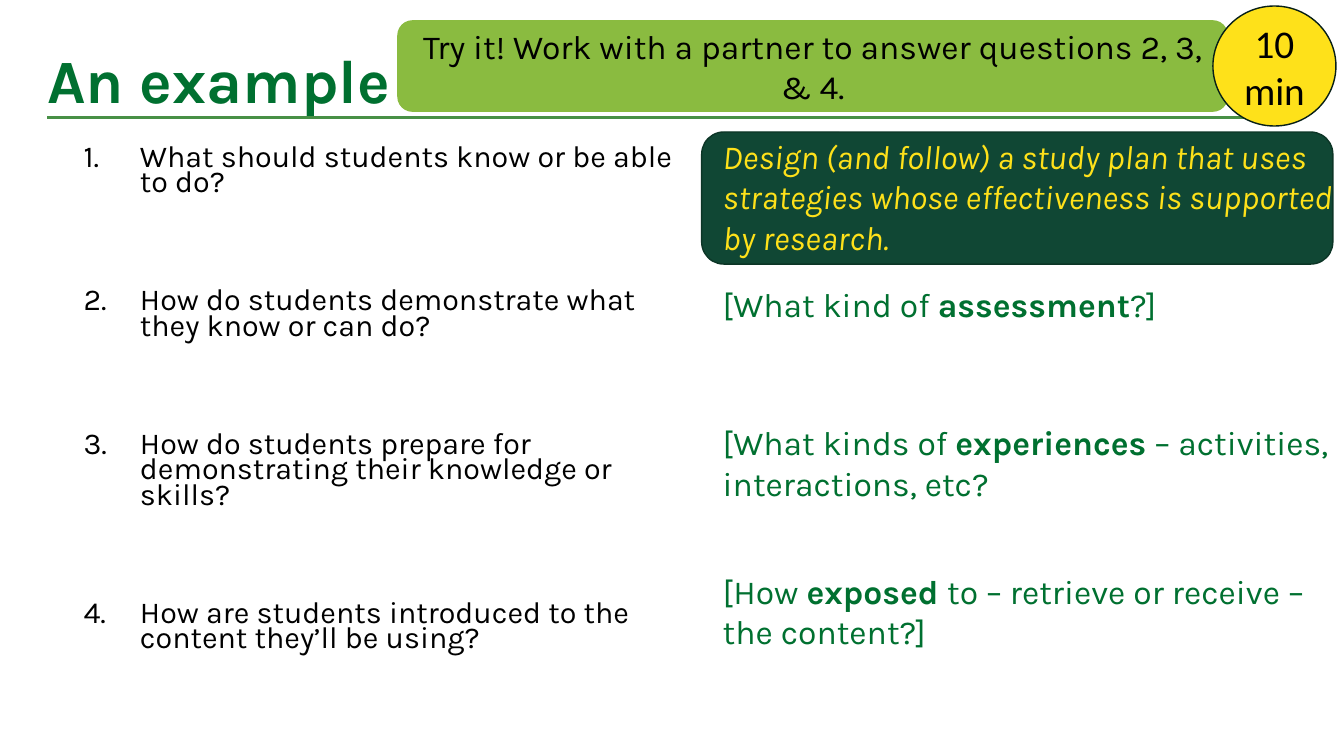
from lxml import etree
from pptx import Presentation
from pptx.dml.color import RGBColor
from pptx.enum.shapes import MSO_CONNECTOR as Connector, MSO_SHAPE as Shape
from pptx.enum.text import MSO_ANCHOR as Anchor, PP_ALIGN as Align
from pptx.oxml.ns import qn
from pptx.util import Inches, Pt

COLORS = {
    "title": "007030", "rule": "489046", "ink": "000000",
    "panel": "104734", "panel_edge": "0C3526", "banner": "8ABB40",
    "yellow": "FEE11A", "badge_edge": "071F17",
}
QUESTIONS = [
    "What should students know or be able to do?",
    "How do students demonstrate what they know or can do?",
    "How do students prepare for demonstrating their knowledge or skills?",
    "How are students introduced to the content they’ll be using?",
]
GOAL = ("Design (and follow) a study plan that uses strategies whose "
        "effectiveness is supported by research.")
PROMPTS = [
    (2.77, 0.5, ("[What kind of ", "assessment", "?]")),
    (4.14, 0.91, ("[What kinds of ", "experiences", " – activities, interactions, etc?")),
    (5.61, 0.91, ("[How ", "exposed ", "to – retrieve or receive – the content?]")),
]


def color(name):
    return RGBColor.from_string(COLORS[name])


def write(para, text, ink, **formats):
    span = para.add_run()
    span.text = text
    span.font.color.rgb = color(ink)
    for name, value in {"name": "Karla", "size": Pt(24), **formats}.items():
        setattr(span.font, name, value)


def add_text(page, box):
    frame = page.shapes.add_textbox(*map(Inches, box)).text_frame
    frame.word_wrap = True
    return frame


def add_panel(page, kind, box, fill, edge=None):
    panel = page.shapes.add_shape(kind, *map(Inches, box))
    panel.shadow.inherit = False
    panel.fill.solid()
    panel.fill.fore_color.rgb = color(fill)
    if edge:
        panel.line.color.rgb = color(edge)
        panel.line.width = Pt(1)
    else:
        panel.line.fill.background()
    return panel


def add_label(panel, text, **formats):
    frame = panel.text_frame
    frame.word_wrap = True
    frame.vertical_anchor = Anchor.MIDDLE
    para = frame.paragraphs[0]
    para.alignment = Align.CENTER
    write(para, text, "ink", **formats)


def add_heading(page, box):
    title = page.shapes.title
    for name, value in zip(("left", "top", "width", "height"), box):
        setattr(title, name, Inches(value))
    title.text_frame.vertical_anchor = Anchor.TOP
    para = title.text_frame.paragraphs[0]
    para.alignment = Align.LEFT
    para.line_spacing = 0.9
    write(para, "An example", "title", size=Pt(44), bold=True)

    left, top, width, _ = box
    start, y = left + 0.1, top + 0.72
    rule = page.shapes.add_connector(
        Connector.STRAIGHT, *map(Inches, (start, y, start + width + 0.35, y)))
    rule.line.color.rgb = color("rule")
    rule.line.width = Pt(2.25)
    etree.SubElement(rule._element.spPr, qn("a:effectLst"))


def add_questions(page, box):
    frame = add_text(page, box)
    for index, question in enumerate(QUESTIONS):
        para = frame.add_paragraph() if index else frame.paragraphs[0]
        para.line_spacing = 0.7
        if index:
            para.space_before = Pt(66)
        properties = para._p.get_or_add_pPr()
        properties.set("marL", str(Inches(0.94)))
        properties.set("indent", str(Inches(-0.56)))
        etree.SubElement(properties, qn("a:buFont"), typeface="+mj-lt")
        etree.SubElement(properties, qn("a:buAutoNum"), type="arabicPeriod")
        write(para, question, "ink", size=Pt(21.7))


def add_answers(page, left, width):
    add_panel(page, Shape.ROUNDED_RECTANGLE, (left - 0.11, 1.31, width, 1.31),
              "panel", "panel_edge")
    goal = add_text(page, (left, 1.3, width, 1.31))
    write(goal.paragraphs[0], GOAL, "yellow", italic=True)
    for top, height, parts in PROMPTS:
        para = add_text(page, (left, top, width, height)).paragraphs[0]
        for index, part in enumerate(parts):
            write(para, part, "title", bold=index == 1)


def add_activity(page, box):
    left, top, width, _ = box
    banner = add_panel(page, Shape.ROUNDED_RECTANGLE, box, "banner")
    add_label(banner, "Try it! Work with a partner to answer questions 2, 3, & 4.")
    badge = add_panel(page, Shape.OVAL, (left + width - 0.15, top - 0.14, 1.22, 1.19),
                      "yellow", "badge_edge")
    add_label(badge, "10 min", name="Calibri", size=Pt(28))


def main():
    deck = Presentation()
    deck.slide_width, deck.slide_height = Inches(13.33), Inches(7.5)
    page = deck.slides.add_slide(deck.slide_layouts[5])
    add_heading(page, (0.37, 0.45, 12, 1.25))
    add_questions(page, (0.35, 1.41, 6.44, 5.83))
    add_answers(page, 7.07, 6.26)
    add_activity(page, (3.94, 0.2, 8.24, 0.91))
    deck.save("out.pptx")


if __name__ == "__main__":
    main()
